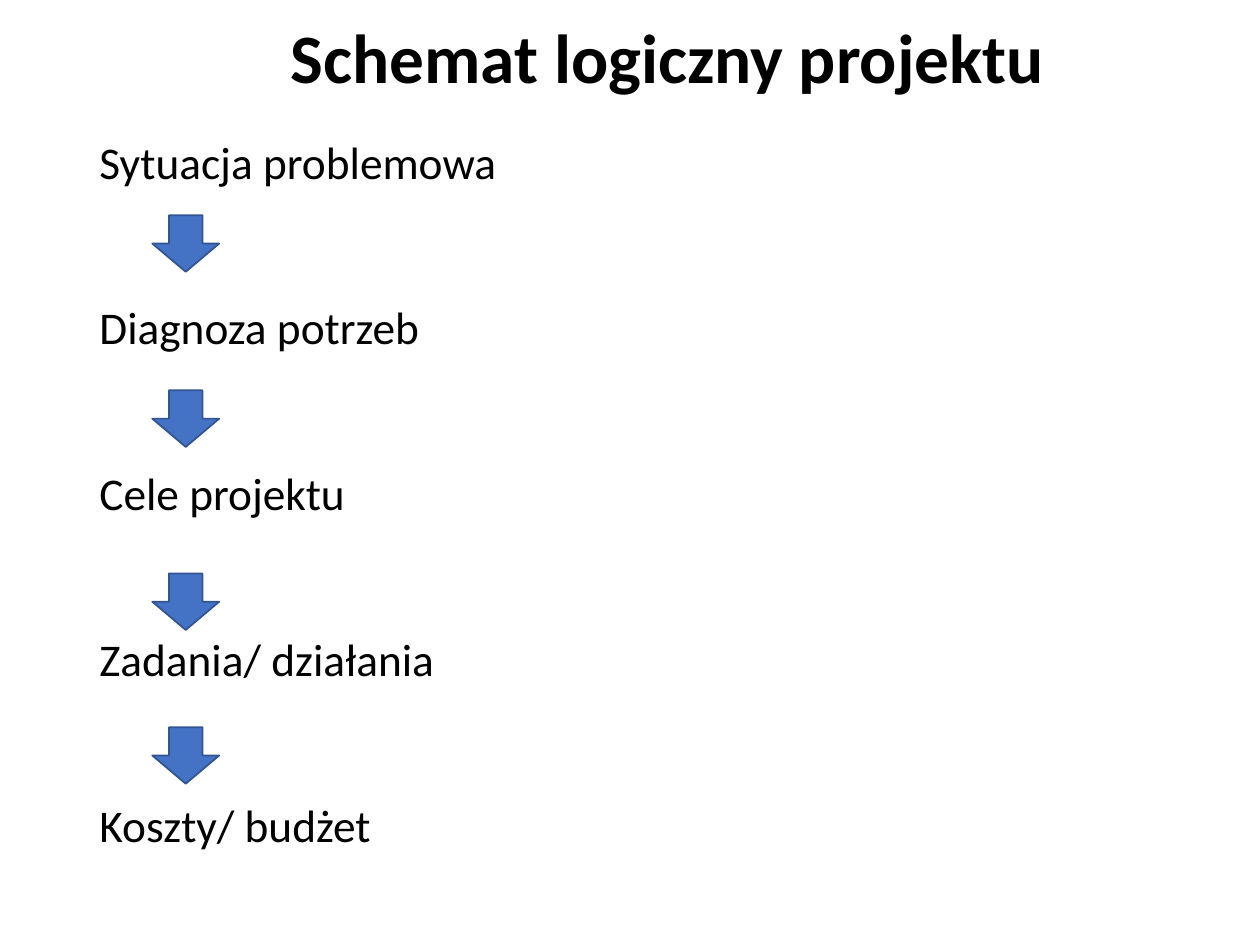
from pptx import Presentation
from pptx.dml.color import RGBColor
from pptx.enum.shapes import MSO_SHAPE
from pptx.enum.text import MSO_ANCHOR, MSO_AUTO_SIZE, PP_ALIGN
from pptx.oxml.ns import qn
from pptx.util import Cm, Pt

DOWN = MSO_SHAPE.DOWN_ARROW
TOP = MSO_ANCHOR.TOP
LEFT = PP_ALIGN.LEFT
FIXED = MSO_AUTO_SIZE.NONE

HUES = {"text": "000000", "fill": "4472C4", "edge": "325491"}
STEPS = [
    "Sytuacja problemowa",
    "Diagnoza potrzeb",
    "Cele projektu",
    "Zadania/ działania",
    "Koszty/ budżet",
]
TOPS = [4.34, 7.87, 11.56, 14.66]


def hue(name):
    return RGBColor.from_string(HUES[name])


def write(para, text, size, bold=False, font="Calibri", line=1.0, gap=0):
    props = para._p.get_or_add_pPr()
    props.set("marL", "0")
    props.set("indent", "0")
    props.append(props.makeelement(qn("a:buNone"), {}))
    para.alignment = LEFT
    para.line_spacing = line
    para.space_before = Pt(gap)
    run = para.add_run()
    run.text = text
    run.font.name = font
    run.font.size = Pt(size)
    run.font.bold = bold
    run.font.color.rgb = hue("text")


class Deck:
    def __init__(self, wide, high):
        self.show = Presentation()
        self.show.slide_width = Cm(wide)
        self.show.slide_height = Cm(high)
        self.slide = self.show.slides.add_slide(self.show.slide_layouts[1])

    def place(self, shape, x, y, wide, high):
        shape.left, shape.top = Cm(x), Cm(y)
        shape.width, shape.height = Cm(wide), Cm(high)
        frame = shape.text_frame
        frame.auto_size = FIXED
        frame.word_wrap = True
        frame.vertical_anchor = TOP
        return frame

    def title(self, text, *box):
        frame = self.place(self.slide.shapes.title, *box)
        frame.margin_top = 0
        write(frame.paragraphs[0], text, 39.6, bold=True, line=0.9)

    def list(self, items, *box):
        frame = self.place(self.slide.placeholders[1], *box)
        for i, item in enumerate(items):
            para = frame.add_paragraph() if i else frame.paragraphs[0]
            write(para, item, 25.9, line=0.7, gap=73 if i else 0)

    def arrow(self, x, y, wide, high):
        shape = self.slide.shapes.add_shape(DOWN, Cm(x), Cm(y), Cm(wide), Cm(high))
        shape.shadow.inherit = False
        shape.fill.solid()
        shape.fill.fore_color.rgb = hue("fill")
        shape.line.color.rgb = hue("edge")
        shape.line.width = Pt(1)


def main():
    deck = Deck(25.4, 19.05)
    deck.title("Schemat logiczny projektu", 5.61, 0.48, 21.89, 3.02)
    deck.list(STEPS, 1.75, 2.87, 21.89, 14.86)
    for top in TOPS:
        deck.arrow(3.07, top, 1.35, 1.14)
    deck.show.save("out.pptx")


if __name__ == "__main__":
    main()
